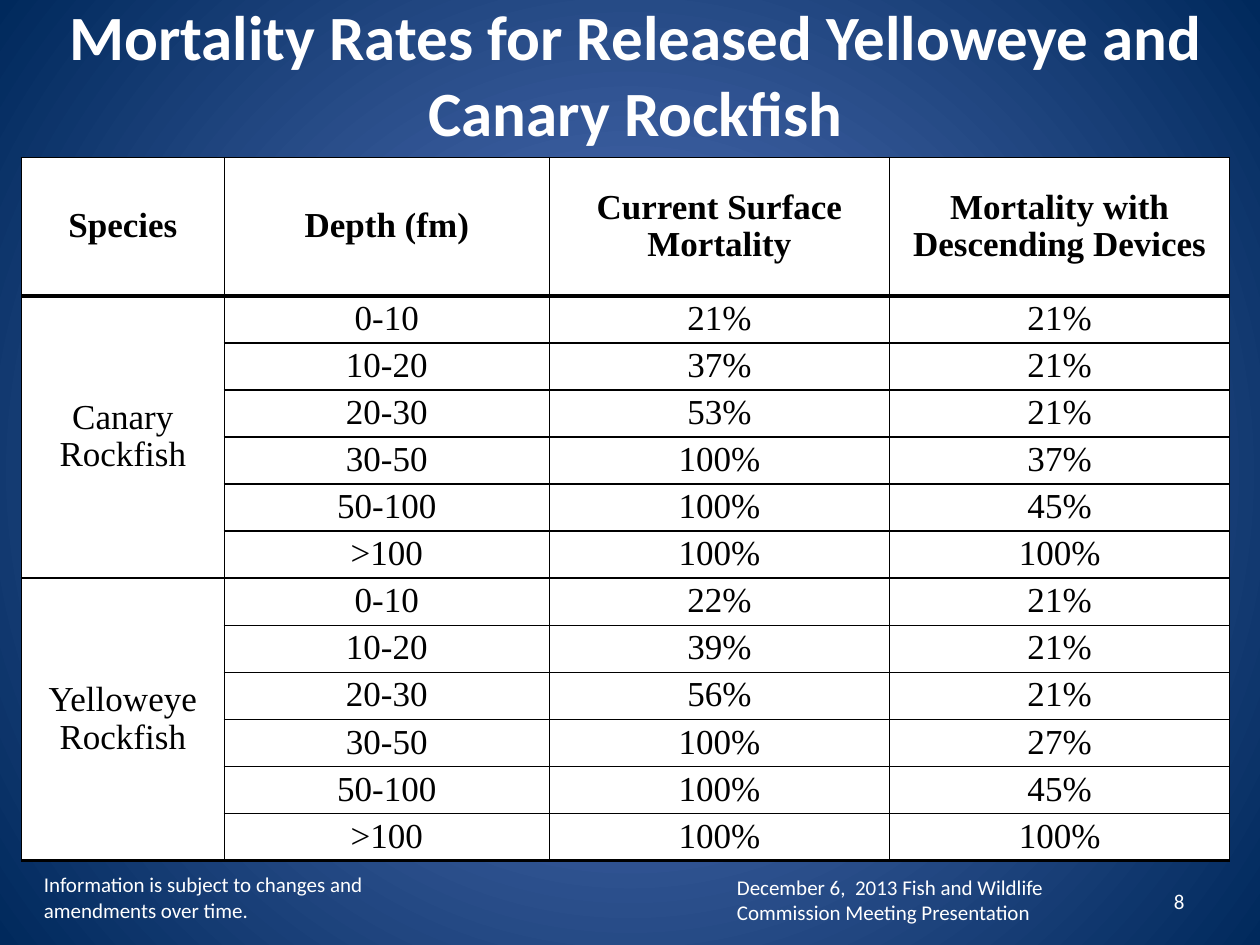
from dataclasses import dataclass

from lxml import etree
from pptx import Presentation, util as u
from pptx.dml.color import RGBColor
from pptx.enum import text
from pptx.oxml.ns import qn


@dataclass(frozen=True)
class Theme:
    white: str = "FFFFFF"
    black: str = "000000"
    glow: str = "5E7CC5"
    navy: str = "00295C"
    sans: str = "Calibri"
    serif: str = "Times New Roman"
    title_size: float = 36
    table_size: float = 20
    footer_size: float = 12
    thin: float = 1
    group_rule: float = 1.5
    header_rule: float = 2.25


@dataclass(frozen=True)
class Style:
    font: str
    size: float
    color: str
    bold: bool = False


@dataclass(frozen=True)
class Label:
    words: str
    left: float
    top: float
    width: float
    height: float
    style: Style
    align: text.PP_ALIGN = text.PP_ALIGN.LEFT
    anchor: text.MSO_ANCHOR = text.MSO_ANCHOR.MIDDLE


@dataclass(frozen=True)
class Species:
    name: str
    surface: tuple[int, ...]
    descending: tuple[int, ...]


THEME = Theme()
TITLE = Style(THEME.sans, THEME.title_size, THEME.white, True)
FOOTER = Style(THEME.sans, THEME.footer_size, THEME.white)
HEADING = Style(THEME.serif, THEME.table_size, THEME.black, True)
BODY = Style(THEME.serif, THEME.table_size, THEME.black)

LABELS = (
    Label("Mortality Rates for Released Yelloweye and Canary Rockfish",
          0.17, 0.08, 9.75, 1, TITLE, text.PP_ALIGN.CENTER),
    Label("Information is subject to changes and amendments over time.",
          0.25, 6.92, 3.17, 0.4, FOOTER),
    Label("8", 7.17, 6.95, 2.33, 0.4, FOOTER, text.PP_ALIGN.RIGHT),
    Label("December 6,  2013 Fish and Wildlife Commission Meeting Presentation",
          5.75, 6.89, 3.42, 0.5, FOOTER, anchor=text.MSO_ANCHOR.TOP),
)

HEADINGS = ("Species", "Depth (fm)", "Current Surface Mortality",
            "Mortality with Descending Devices")
DEPTHS = ("0-10", "10-20", "20-30", "30-50", "50-100", ">100")
SPECIES = (
    Species("Canary Rockfish", (21, 37, 53, 100, 100, 100), (21, 21, 21, 37, 45, 100)),
    Species("Yelloweye Rockfish", (22, 39, 56, 100, 100, 100), (21, 21, 21, 27, 45, 100)),
)
COLUMN_WIDTHS = (1.61, 2.58, 2.7, 2.7)
TABLE_LEFT, TABLE_TOP, TABLE_HEIGHT, HEADER_HEIGHT = 0.17, 1.25, 5.58, 1.1


def write(frame, words: str, style: Style, align: text.PP_ALIGN, spacing: float = 1.0) -> None:
    paragraph = frame.paragraphs[0]
    paragraph.alignment = align
    paragraph.line_spacing = spacing
    run = paragraph.add_run()
    run.text = words
    run.font.name = style.font
    run.font.size = u.Pt(style.size)
    run.font.bold = style.bold
    run.font.color.rgb = RGBColor.from_string(style.color)


def paint_background(slide) -> None:
    """Fill the slide with a gradient that spreads from its centre."""
    fill = slide.background.fill
    fill.gradient()
    for stop, color in zip(fill.gradient_stops, (THEME.glow, THEME.navy)):
        stop.color.rgb = RGBColor.from_string(color)
    gradient = slide.element.find(".//" + qn("a:gradFill"))
    linear = gradient.find(qn("a:lin"))
    radial = etree.Element(qn("a:path"))
    radial.set("path", "circle")
    centre = etree.SubElement(radial, qn("a:fillToRect"))
    for side in "ltrb":
        centre.set(side, "50000")
    gradient.replace(linear, radial)


def add_label(slide, label: Label) -> None:
    box = slide.shapes.add_textbox(
        *map(u.Inches, (label.left, label.top, label.width, label.height)))
    box.text_frame.word_wrap = True
    box.text_frame.vertical_anchor = label.anchor
    write(box.text_frame, label.words, label.style, label.align)


def set_borders(cell, top: float, bottom: float) -> None:
    properties = cell._tc.get_or_add_tcPr()
    widths = {"a:lnL": THEME.thin, "a:lnR": THEME.thin, "a:lnT": top, "a:lnB": bottom}
    for index, (tag, width) in enumerate(widths.items()):
        line = etree.Element(qn(tag), w=str(u.Pt(width)))
        solid = etree.SubElement(line, qn("a:solidFill"))
        etree.SubElement(solid, qn("a:srgbClr"), val=THEME.black)
        properties.insert(index, line)


def rule_below(row: int) -> float:
    """Width of the line under a row: heavy under the header, medium under a species."""
    if row == 0:
        return THEME.header_rule
    return THEME.group_rule if row > 0 and row % len(DEPTHS) == 0 else THEME.thin


def fill_cell(cell, words: str, style: Style) -> None:
    write(cell.text_frame, words, style, text.PP_ALIGN.CENTER, 0.96)


def add_mortality_table(slide) -> None:
    data_rows = len(SPECIES) * len(DEPTHS)
    table = slide.shapes.add_table(
        data_rows + 1, len(HEADINGS), u.Inches(TABLE_LEFT), u.Inches(TABLE_TOP),
        u.Inches(sum(COLUMN_WIDTHS)), u.Inches(TABLE_HEIGHT)).table
    for column, width in zip(table.columns, COLUMN_WIDTHS):
        column.width = u.Inches(width)
    for index, row in enumerate(table.rows):
        row.height = u.Inches(
            (TABLE_HEIGHT - HEADER_HEIGHT) / data_rows if index else HEADER_HEIGHT)
        for cell in row.cells:
            cell.fill.solid()
            cell.fill.fore_color.rgb = RGBColor.from_string(THEME.white)
            cell.margin_left = cell.margin_right = cell.margin_top = cell.margin_bottom = 0
            cell.vertical_anchor = text.MSO_ANCHOR.MIDDLE
            set_borders(cell, rule_below(index - 1), rule_below(index))

    for column, heading in enumerate(HEADINGS):
        fill_cell(table.cell(0, column), heading, HEADING)
    for group, species in enumerate(SPECIES):
        first = 1 + group * len(DEPTHS)
        name_cell = table.cell(first, 0)
        name_cell.merge(table.cell(first + len(DEPTHS) - 1, 0))
        set_borders(name_cell, rule_below(first - 1), THEME.group_rule)
        for extra in list(name_cell._tc.tcPr)[4:8]:
            name_cell._tc.tcPr.remove(extra)
        fill_cell(name_cell, species.name, BODY)
        records = zip(DEPTHS, species.surface, species.descending)
        for row, (depth, surface, descending) in enumerate(records, first):
            for column, words in enumerate((depth, f"{surface}%", f"{descending}%"), 1):
                fill_cell(table.cell(row, column), words, BODY)


def main() -> None:
    presentation = Presentation()
    presentation.slide_width, presentation.slide_height = u.Inches(10), u.Inches(7.5)
    slide = presentation.slides.add_slide(presentation.slide_layouts[6])
    paint_background(slide)
    for label in LABELS:
        add_label(slide, label)
    add_mortality_table(slide)
    presentation.save("out.pptx")


if __name__ == "__main__":
    main()
